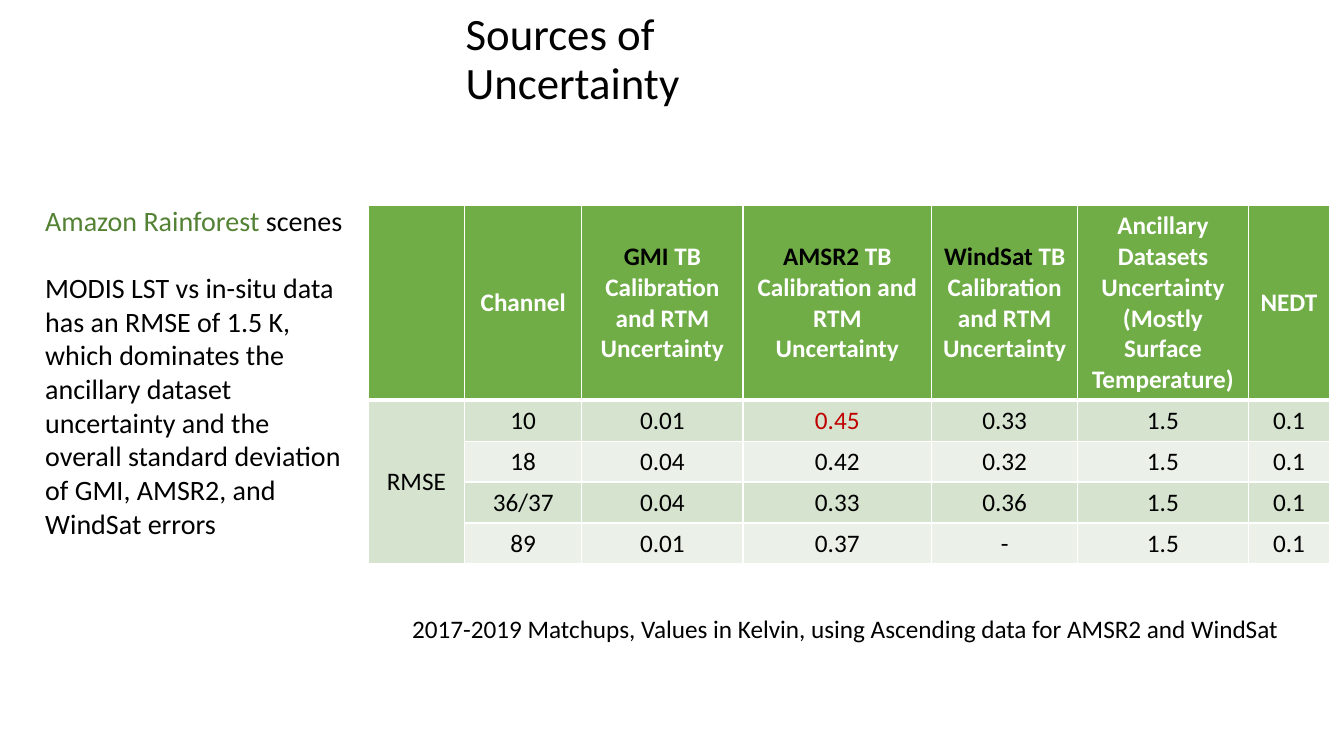
from dataclasses import dataclass

from lxml import etree
from pptx import Presentation
from pptx.dml.color import RGBColor
from pptx.enum.text import MSO_ANCHOR, PP_ALIGN
from pptx.oxml.ns import qn
from pptx.util import Inches, Pt

MIDDLE, TOP = MSO_ANCHOR.MIDDLE, MSO_ANCHOR.TOP
CENTER = PP_ALIGN.CENTER


@dataclass(frozen=True)
class Theme:
    font: str = "Calibri"
    black: str = "000000"
    white: str = "FFFFFF"
    red: str = "C00000"
    dark_green: str = "548235"
    header: str = "70AD47"
    bands: tuple = ("D5E3CF", "EBF1E9")
    title_size: int = 32
    body_size: int = 20
    table_size: int = 18
    thin: int = 1
    thick: int = 3


THEME = Theme()

# Every paragraph is a list of (text, colour) runs.
TITLE = [[("Sources of Uncertainty", THEME.black)]]
SCENES = [
    [("Amazon Rainforest ", THEME.dark_green), ("scenes", THEME.black)],
    [("MODIS LST vs in-situ data has an RMSE of 1.5 K, which dominates the "
      "ancillary dataset uncertainty and the overall standard deviation of "
      "GMI, AMSR2, and WindSat errors", THEME.black)],
]
FOOTNOTE = [[("2017-2019 Matchups, Values in Kelvin, using Ascending data "
              "for AMSR2 and WindSat", THEME.black)]]

SENSORS = ["GMI", "AMSR2", "WindSat"]
SENSOR_HEADING = " TB Calibration and RTM Uncertainty"
ANCILLARY = "Ancillary Datasets Uncertainty (Mostly Surface Temperature)"
ROW_LABEL = "RMSE"
HIGHLIGHT = "0.45"
ERRORS = [
    ("10", "0.01", "0.45", "0.33", "1.5", "0.1"),
    ("18", "0.04", "0.42", "0.32", "1.5", "0.1"),
    ("36/37", "0.04", "0.33", "0.36", "1.5", "0.1"),
    ("89", "0.01", "0.37", "-", "1.5", "0.1"),
]

SLIDE_SIZE = (13.33, 7.5)
TITLE_BOX = (4.52, 0.09, 4.3, 1.02)
SCENES_BOX = (0.35, 1.97, 3.24, 3.47)
FOOTNOTE_BOX = (3.99, 6.04, 8.86, 0.4)
TABLE_CORNER = (3.65, 2.04)
COLUMN_WIDTHS = (0.96, 1.16, 1.6, 1.87, 1.45, 1.69, 0.81)
HEADER_HEIGHT, ROW_HEIGHT = 1.93, 0.4


def write_runs(para, runs, size, bold=False):
    for text, colour in runs:
        span = para.add_run()
        span.text = text
        span.font.name = THEME.font
        span.font.size = Pt(size)
        span.font.bold = bold
        span.font.color.rgb = RGBColor.from_string(colour)


def add_text(page, place, paragraphs, size, anchor=TOP):
    box = page.shapes.add_textbox(*map(Inches, place))
    frame = box.text_frame
    frame.word_wrap = True
    frame.vertical_anchor = anchor
    for index, runs in enumerate(paragraphs):
        para = frame.add_paragraph() if index else frame.paragraphs[0]
        if index:
            para.space_before = Pt(size * 1.2)
        write_runs(para, runs, size)
    return frame


def set_borders(cell, widths):
    """Draw white cell borders; widths are points for left, right, top, bottom."""
    properties = cell._tc.get_or_add_tcPr()
    for position, (side, width) in enumerate(zip("LRTB", widths)):
        line = etree.Element(qn(f"a:ln{side}"), w=str(Pt(width)))
        fill = etree.SubElement(line, qn("a:solidFill"))
        etree.SubElement(fill, qn("a:srgbClr"), val=THEME.white)
        properties.insert(position, line)


def table_rows():
    """Return the table as rows of cells, each cell a list of runs."""
    header = [[], [("Channel", THEME.white)]]
    header += [[(sensor, THEME.black), (SENSOR_HEADING, THEME.white)]
               for sensor in SENSORS]
    header += [[(text, THEME.white)] for text in (ANCILLARY, "NEDT")]
    rows = [header]
    for index, values in enumerate(ERRORS):
        label = [] if index else [(ROW_LABEL, THEME.black)]
        rows.append([label] + [
            [(value, THEME.red if value == HIGHLIGHT else THEME.black)]
            for value in values])
    return rows


def add_error_table(page):
    rows = table_rows()
    heights = [HEADER_HEIGHT] + [ROW_HEIGHT] * len(ERRORS)
    size = (sum(COLUMN_WIDTHS), sum(heights))
    table = page.shapes.add_table(len(rows), len(COLUMN_WIDTHS),
                                  *map(Inches, TABLE_CORNER + size)).table
    for column, width in zip(table.columns, COLUMN_WIDTHS):
        column.width = Inches(width)
    for row, height in zip(table.rows, heights):
        row.height = Inches(height)
    for row_index, row in enumerate(rows):
        is_header = row_index == 0
        top = THEME.thick if row_index == 1 else THEME.thin
        bottom = THEME.thick if is_header else THEME.thin
        for column_index, runs in enumerate(row):
            band = 0 if column_index == 0 else (row_index - 1) % 2
            colour = THEME.header if is_header else THEME.bands[band]
            cell = table.cell(row_index, column_index)
            cell.fill.solid()
            cell.fill.fore_color.rgb = RGBColor.from_string(colour)
            cell.vertical_anchor = MIDDLE
            set_borders(cell, (THEME.thin, THEME.thin, top, bottom))
            para = cell.text_frame.paragraphs[0]
            para.alignment = CENTER
            write_runs(para, runs, THEME.table_size, bold=is_header)
    table.cell(1, 0).merge(table.cell(len(ERRORS), 0))


def main():
    deck = Presentation()
    deck.slide_width, deck.slide_height = map(Inches, SLIDE_SIZE)
    page = deck.slides.add_slide(deck.slide_layouts[6])
    add_error_table(page)
    add_text(page, SCENES_BOX, SCENES, THEME.body_size)
    add_text(page, FOOTNOTE_BOX, FOOTNOTE, THEME.table_size)
    title = add_text(page, TITLE_BOX, TITLE, THEME.title_size, MIDDLE)
    title.margin_right = Inches(0.3)
    title.paragraphs[0].line_spacing = 0.9
    deck.save("out.pptx")


if __name__ == "__main__":
    main()
